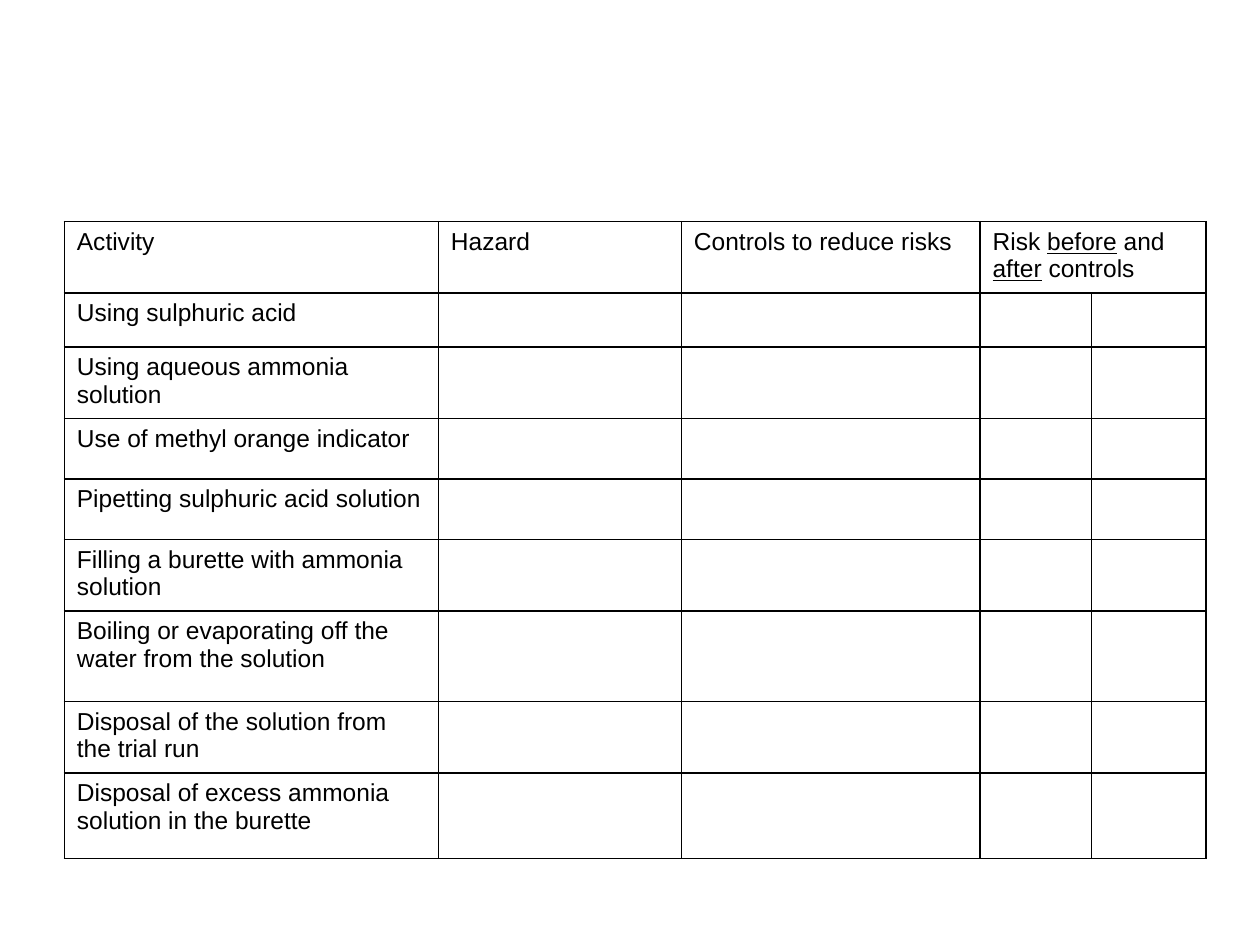
from lxml import etree
from pptx import Presentation
from pptx.dml.color import RGBColor
from pptx.oxml.ns import qn
from pptx.util import Cm, Pt

BLACK = "000000"


def rgb(value):
    return RGBColor.from_string(value)


def add_borders(cell, color):
    tcPr = cell._tc.get_or_add_tcPr()
    for side in ("a:lnL", "a:lnR", "a:lnT", "a:lnB"):
        ln = etree.SubElement(tcPr, qn(side), w=str(Pt(1)))
        fill = etree.SubElement(ln, qn("a:solidFill"))
        etree.SubElement(fill, qn("a:srgbClr"), val=color)


prs = Presentation()
prs.slide_width, prs.slide_height = Cm(25.4), Cm(19.05)
s = prs.slides.add_slide(prs.slide_layouts[6])

headings = ["Activity", "Hazard", "Controls to reduce risks"]
risk_runs = [("Risk ", False), ("before", True), (" and ", False),
             ("after", True), (" controls", False)]
activities = [
    "Using sulphuric acid",
    "Using aqueous ammonia solution",
    "Use of methyl orange indicator",
    "Pipetting sulphuric acid solution",
    "Filling a burette with ammonia solution",
    "Boiling or evaporating off the water from the solution",
    "Disposal of the solution from the trial run",
    "Disposal of excess ammonia solution in the burette",
]
col_widths = [7.54, 4.9, 6.02, 2.24, 2.31]
row_heights = [1.44, 1.09, 1.44, 1.22, 1.22, 1.44, 1.82, 1.44, 1.73]

# Risk assessment table
table = s.shapes.add_table(
    len(row_heights), len(col_widths), Cm(1.3), Cm(4.47),
    Cm(sum(col_widths)), Cm(sum(row_heights))).table
table.first_row = table.horz_banding = False
for column, width in zip(table.columns, col_widths):
    column.width = Cm(width)
for row, height in zip(table.rows, row_heights):
    row.height = Cm(height)

# Wording
for col, heading in enumerate(headings):
    table.cell(0, col).text = heading
for row, activity in enumerate(activities, 1):
    table.cell(row, 0).text = activity
risk = table.cell(0, 3)
risk.merge(table.cell(0, 4))
for wording, underlined in risk_runs:
    r = risk.text_frame.paragraphs[0].add_run()
    r.text = wording
    if underlined:
        r.font.underline = True

# Borders, fill and font
for cell in table.iter_cells():
    add_borders(cell, BLACK)
    cell.fill.background()
    cell.margin_left = cell.margin_right = Cm(0.25)
    cell.margin_top = cell.margin_bottom = Cm(0.13)
    font = cell.text_frame.paragraphs[0].font
    font.name, font.size = "Arial", Pt(14)
    font.color.rgb = rgb(BLACK)

prs.save("out.pptx")
